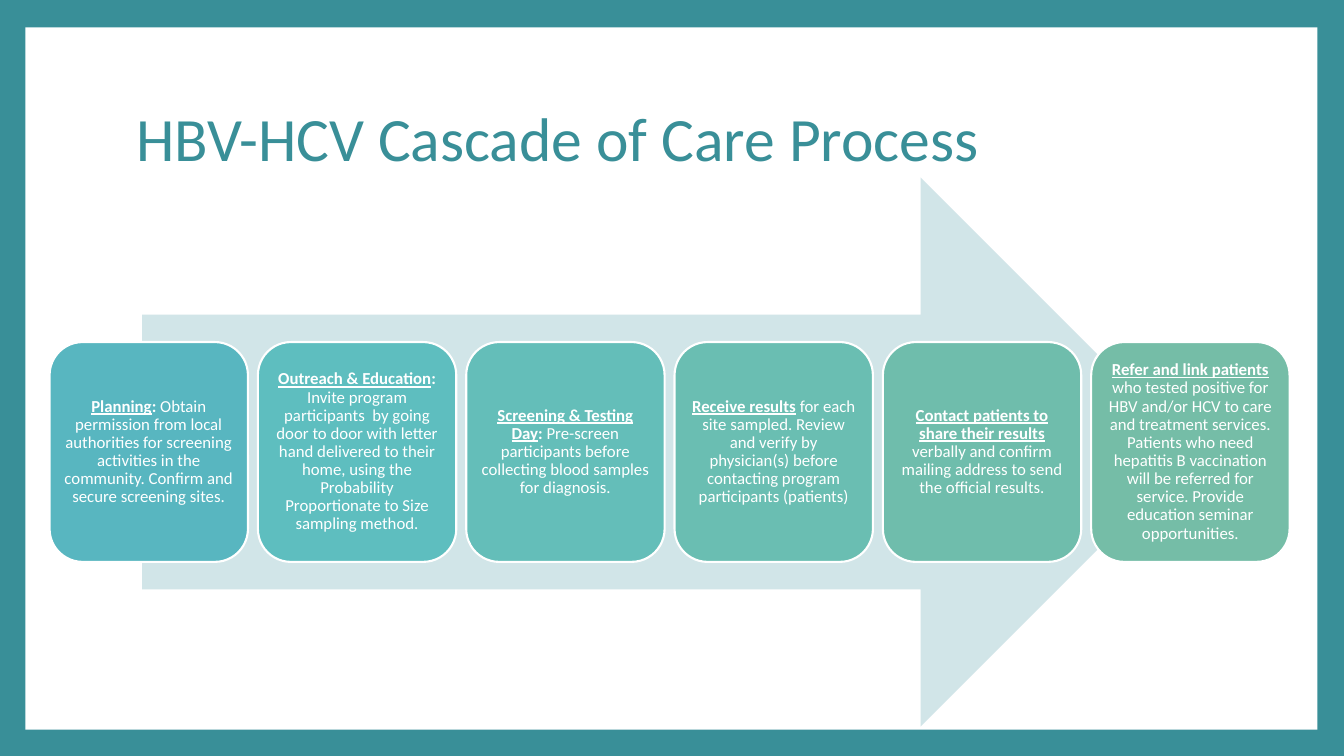
from dataclasses import dataclass

from pptx import Presentation
from pptx.dml.color import RGBColor
from pptx.enum import shapes, text
from pptx.shapes.autoshape import Shape
from pptx.slide import Slide
from pptx.util import Cm, Pt


@dataclass(frozen=True)
class Theme:
    font: str = "Calibri"
    teal: str = "398F98"
    white: str = "FFFFFF"
    arrow: str = "D1E5E8"
    title_size: float = 44
    step_size: float = 12
    outline: float = 1.5


@dataclass(frozen=True)
class Frame:
    left: float
    top: float
    width: float
    height: float

    def lengths(self) -> tuple[Cm, Cm, Cm, Cm]:
        return Cm(self.left), Cm(self.top), Cm(self.width), Cm(self.height)


@dataclass(frozen=True)
class Step:
    fill: str
    heading: str
    mark: str
    detail: str


THEME = Theme()
PANEL = Frame(0.64, 0.69, 32.56, 17.7)
TITLE = Frame(3.18, 1.7, 27.43, 3.76)
ARROW = Frame(3.58, 4.47, 26.54, 13.84)
FIRST_STEP = Frame(1.25, 8.62, 5, 5.54)
STEP_PITCH = 5.25
STEP_MARGIN = 0.13

STEPS = [
    Step("58B6C0", "Planning", ": ",
         "Obtain permission from local authorities for screening activities in "
         "the community. Confirm and secure screening sites."),
    Step("5EBEBF", "Outreach & Education", ":",
         " Invite program participants  by going door to door with letter hand "
         "delivered to their home, using the Probability Proportionate to Size "
         "sampling method."),
    Step("64BEB9", "Screening & Testing Day", ": ",
         "Pre-screen participants before collecting blood samples for diagnosis."),
    Step("6ABEB2", "Receive results", "",
         " for each site sampled. Review and verify by physician(s) before "
         "contacting program participants (patients)"),
    Step("6FBDAC", "Contact patients to share their results ", "",
         "verbally and confirm mailing address to send the official results."),
    Step("75BDA7", "Refer and link patients ", "",
         "who tested positive for HBV and/or HCV to care and treatment services. "
         "Patients who need hepatitis B vaccination will be referred for service. "
         "Provide education seminar opportunities."),
]


def add_span(box: Shape, words: str, *, size: float, color: str,
             bold: bool = False, underline: bool = False) -> None:
    """Append formatted words to the first paragraph of a box."""
    span = box.text_frame.paragraphs[0].add_run()
    span.text = words
    span.font.name = THEME.font
    span.font.size = Pt(size)
    span.font.bold = bold
    span.font.underline = underline
    span.font.color.rgb = RGBColor.from_string(color)


def set_text_layout(box: Shape, align: text.PP_ALIGN) -> None:
    """Wrap and centre the text vertically, with tight lines."""
    frame = box.text_frame
    frame.word_wrap = True
    frame.vertical_anchor = text.MSO_ANCHOR.MIDDLE
    para = frame.paragraphs[0]
    para.alignment = align
    para.line_spacing = 0.9


def add_block(page: Slide, kind: shapes.MSO_SHAPE, frame: Frame, fill: str,
              line: str | None = None) -> Shape:
    """Draw a flat preset shape."""
    box = page.shapes.add_shape(kind, *frame.lengths())
    box.shadow.inherit = False
    box.fill.solid()
    box.fill.fore_color.rgb = RGBColor.from_string(fill)
    if line:
        box.line.color.rgb = RGBColor.from_string(line)
        box.line.width = Pt(THEME.outline)
    else:
        box.line.fill.background()
    return box


def add_title(page: Slide, words: str) -> None:
    """Place the slide heading."""
    box = page.shapes.add_textbox(*TITLE.lengths())
    set_text_layout(box, text.PP_ALIGN.LEFT)
    add_span(box, words, size=THEME.title_size, color=THEME.teal)


def add_step(page: Slide, index: int, step: Step) -> None:
    """Draw one step of the process in its place along the row."""
    frame = Frame(FIRST_STEP.left + index * STEP_PITCH, FIRST_STEP.top,
                  FIRST_STEP.width, FIRST_STEP.height)
    box = add_block(page, shapes.MSO_SHAPE.ROUNDED_RECTANGLE, frame,
                    step.fill, THEME.white)
    set_text_layout(box, text.PP_ALIGN.CENTER)
    for side in ("left", "top", "right", "bottom"):
        setattr(box.text_frame, f"margin_{side}", Cm(STEP_MARGIN))
    style = {"size": THEME.step_size, "color": THEME.white}
    add_span(box, step.heading, bold=True, underline=True, **style)
    if step.mark:
        add_span(box, step.mark, bold=True, **style)
    add_span(box, step.detail, **style)


def main() -> None:
    """Build and save the deck."""
    deck = Presentation()
    deck.slide_width, deck.slide_height = Cm(33.87), Cm(19.05)
    page = deck.slides.add_slide(deck.slide_layouts[6])
    page.background.fill.solid()
    page.background.fill.fore_color.rgb = RGBColor.from_string(THEME.teal)
    add_block(page, shapes.MSO_SHAPE.RECTANGLE, PANEL, THEME.white)
    add_title(page, "HBV-HCV Cascade of Care Process")
    add_block(page, shapes.MSO_SHAPE.RIGHT_ARROW, ARROW, THEME.arrow)
    for index, step in enumerate(STEPS):
        add_step(page, index, step)
    deck.save("out.pptx")


if __name__ == "__main__":
    main()
